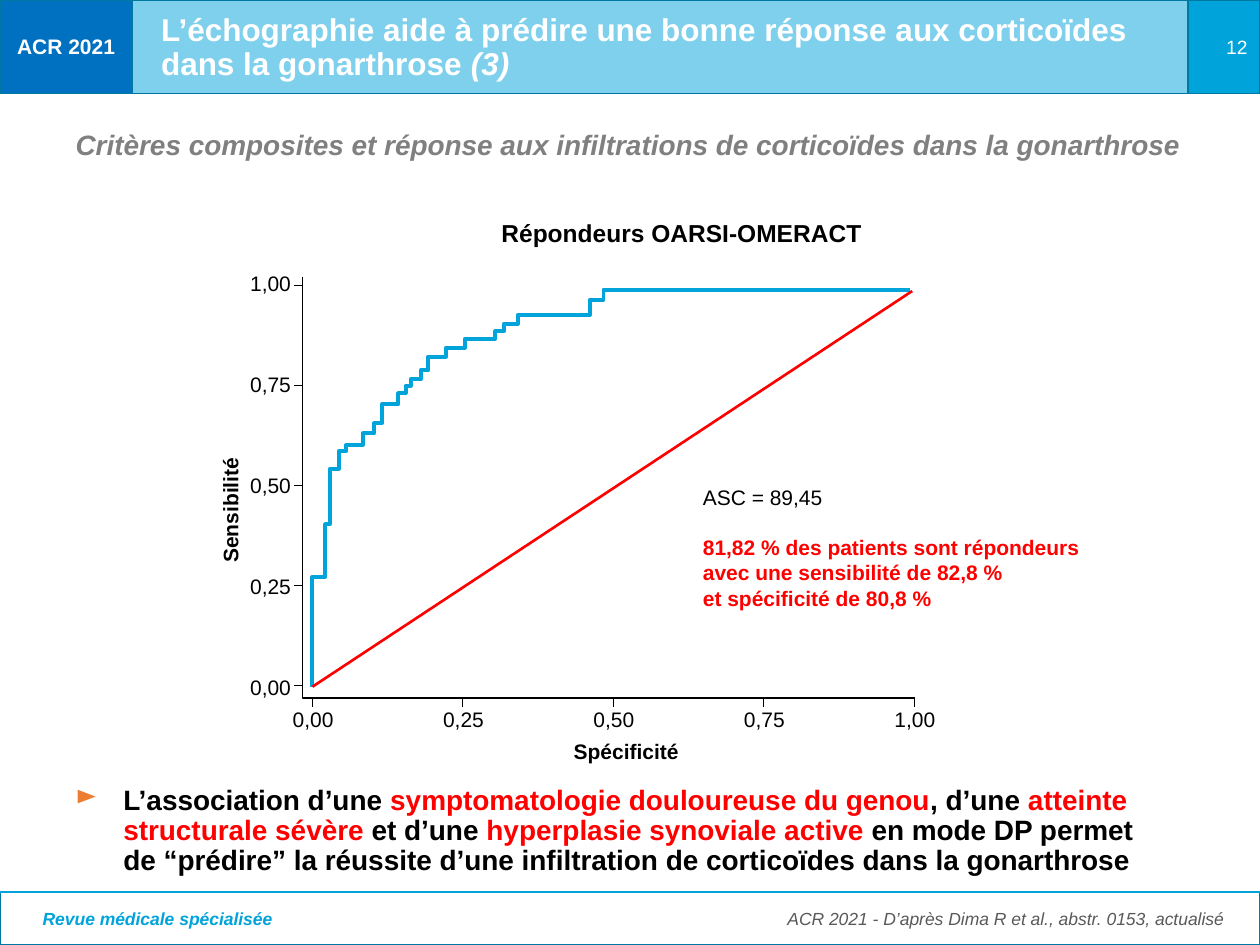
from dataclasses import dataclass
from itertools import chain
from typing import Optional

from lxml.etree import SubElement
from pptx import Presentation
from pptx.dml.color import RGBColor
from pptx.enum.shapes import MSO_CONNECTOR, MSO_SHAPE
from pptx.enum.text import MSO_ANCHOR, MSO_AUTO_SIZE, PP_ALIGN
from pptx.oxml.ns import qn
from pptx.util import Inches, Pt

COLS, ROWS = 100, 75
WIDTH, HEIGHT = Inches(10), Inches(7.5)
BLACK, WHITE, RED, CYAN, EDGE = "000000", "FFFFFF", "FF0000", "00A3DA", "0079A1"
LEFT, MID, RIGHT = PP_ALIGN.LEFT, PP_ALIGN.CENTER, PP_ALIGN.RIGHT


@dataclass(frozen=True)
class Box:
    """A place on the grid, in columns and rows."""
    col: float
    row: float
    cols: float
    rows: float


@dataclass(frozen=True)
class Style:
    """The look of a paragraph."""
    size: float
    color: str = BLACK
    bold: bool = False
    italic: bool = False
    align: PP_ALIGN = LEFT
    space: Optional[float] = None
    before: float = 0


@dataclass(frozen=True)
class Part:
    """A run, with what sets it apart from its paragraph."""
    text: str
    color: Optional[str] = None
    italic: Optional[bool] = None


@dataclass(frozen=True)
class Panel:
    """A filled block of the page frame."""
    box: Box
    fill: str
    alpha: int = 100
    text: str = ""
    style: Style = Style(12)


def across(col: float) -> int:
    """Turn columns into a length."""
    return round(WIDTH * col / COLS)


def down(row: float) -> int:
    """Turn rows into a length."""
    return round(HEIGHT * row / ROWS)


def place(box: Box) -> tuple[int, int, int, int]:
    """Give left, top, width and height of a box."""
    return across(box.col), down(box.row), across(box.cols), down(box.rows)


def paint(target, color: str) -> None:
    """Colour a fill solidly."""
    target.solid()
    target.fore_color.rgb = RGBColor.from_string(color)


def write(para, style: Style, parts: list[Part]) -> None:
    """Fill a paragraph with styled runs."""
    font = para.font
    font.name, font.size = "Arial", Pt(style.size)
    font.bold, font.italic = style.bold, style.italic
    paint(font.fill, style.color)
    para.alignment, para.line_spacing = style.align, style.space
    para.space_before = Pt(style.before)
    for part in parts:
        for turn, line in enumerate(part.text.split("\n")):
            if turn:
                para.add_line_break()
            run = para.add_run()
            run.text = line
            run.font.italic = part.italic
            if part.color:
                paint(run.font.fill, part.color)


def add_text(shapes, box: Box, style: Style, *parts: Part, tight: bool = False):
    """Add a text box, with no margins or wrapping if tight."""
    shape = shapes.add_textbox(*place(box))
    frame = shape.text_frame
    frame.word_wrap = not tight
    if tight:
        frame.margin_left = frame.margin_right = 0
        frame.margin_top = frame.margin_bottom = 0
    write(frame.paragraphs[0], style, list(parts))
    return shape


def add_panel(shapes, panel: Panel) -> None:
    """Add a block with its thin edge and any text."""
    shape = shapes.add_shape(MSO_SHAPE.RECTANGLE, *place(panel.box))
    shape.shadow.inherit = False
    paint(shape.fill, panel.fill)
    if panel.alpha < 100:
        color = shape.fill._xPr.find(".//" + qn("a:srgbClr"))
        SubElement(color, qn("a:alpha")).set("val", str(panel.alpha * 1000))
    paint(shape.line.fill, EDGE)
    shape.line.width = Pt(0)
    if panel.text:
        shape.text_frame.vertical_anchor = MSO_ANCHOR.MIDDLE
        write(shape.text_frame.paragraphs[0], panel.style, [Part(panel.text)])


def add_line(shapes, start: tuple, end: tuple, color: str, width: float) -> None:
    """Add a straight line between two grid points."""
    line = shapes.add_connector(MSO_CONNECTOR.STRAIGHT, across(start[0]), down(start[1]),
                                across(end[0]), down(end[1]))
    paint(line.line.fill, color)
    line.line.width = Pt(width)
    SubElement(line._element.spPr, qn("a:effectLst"))


def add_trace(shapes, points: list[tuple], color: str, width: float) -> None:
    """Add an open outline through grid points."""
    first, *rest = [(across(col), down(row)) for col, row in points]
    pen = shapes.build_freeform(*first)
    pen.add_line_segments(rest, close=False)
    shape = pen.convert_to_shape()
    shape.shadow.inherit = False
    shape.fill.background()
    paint(shape.line.fill, color)
    shape.line.width = Pt(width)


def add_bullet(para, mark: str, color: str, indent: float) -> None:
    """Give a paragraph a coloured bullet and a hanging indent."""
    props = para._p.get_or_add_pPr()
    props.set("marL", str(across(indent)))
    props.set("indent", str(-across(indent)))
    tint = SubElement(props, qn("a:buClr"))
    SubElement(tint, qn("a:srgbClr")).set("val", color)
    sign = SubElement(props, qn("a:buChar"))
    sign.set("char", mark)
    props.find(qn("a:defRPr")).addprevious(tint)
    props.find(qn("a:defRPr")).addprevious(sign)


def add_curve(shapes) -> None:
    """Draw the ROC plot: axes, ticks, labels, steps and diagonal."""
    left, base = 24, 55.4
    add_trace(shapes, [(72.6, base), (left, base), (left, 22)], BLACK, 0.63)
    for turn, label in enumerate(["0,00", "0,25", "0,50", "0,75", "1,00"]):
        col, row = 24.8 + 11.94 * turn, 54.4 - 7.93 * turn
        add_line(shapes, (left, row), (left - 0.7, row), BLACK, 0.63)
        add_line(shapes, (col, base), (col, base + 0.7), BLACK, 0.63)
        add_text(shapes, Box(19.8, 53.5 - 8 * turn, 3.3, 2),
                 Style(12, align=RIGHT), Part(label), tight=True)
        add_text(shapes, Box(col - 1.6, 56.1, 3.3, 2),
                 Style(12, align=MID), Part(label), tight=True)
    name = Style(12, bold=True, align=MID)
    add_text(shapes, Box(45.5, 58.6, 8.4, 2), name, Part("Spécificité"), tight=True)
    side = add_text(shapes, Box(13.8, 39.5, 8.9, 2), name, Part("Sensibilité"), tight=True)
    side.rotation = 270
    cols = [24.8, 25.8, 26.2, 26.9, 27.5, 28.8, 29.7, 30.3, 31.6, 32.2, 32.6, 33.4,
            34, 35.4, 36.9, 39.3, 40, 41.1, 46.8, 47.9, 72.2]
    rows = [54.5, 45.8, 41.6, 37.2, 35.8, 35.3, 34.4, 33.6, 32.1, 31.2, 30.6, 30.1,
            29.4, 28.3, 27.6, 26.9, 26.3, 25.7, 25, 23.8, 23]
    steps = chain.from_iterable(((a, b), (a, c)) for a, b, c in zip(cols, rows, rows[1:]))
    add_trace(shapes, [*steps, (cols[-1], rows[-1])], CYAN, 2.25)
    add_line(shapes, (24.8, 54.5), (72.4, 23.1), RED, 1.5)


def main() -> None:
    """Build the slide and save it."""
    deck = Presentation()
    deck.slide_width, deck.slide_height = WIDTH, HEIGHT
    slide = deck.slides.add_slide(deck.slide_layouts[5])
    shapes = slide.shapes
    for panel in [
        Panel(Box(0, 70.8, 100, 4.2), WHITE),
        Panel(Box(10.5, 0, 83.8, 7.4), CYAN, 50),
        Panel(Box(0, 0, 10.5, 7.4), "0070C0", 100, "ACR 2021",
              Style(12, WHITE, True, align=MID)),
        Panel(Box(94.3, 0, 5.7, 7.4), CYAN, 100, "12", Style(11, WHITE, align=RIGHT)),
    ]:
        add_panel(shapes, panel)
    add_line(shapes, (0, 70.8), (100, 70.8), CYAN, 0.75)
    add_text(shapes, Box(2.4, 71.6, 34.7, 2.7), Style(10, CYAN, True, True),
             Part("Revue médicale spécialisée"))
    add_text(shapes, Box(57.7, 71.6, 40.4, 2.7), Style(10, "595959", italic=True, align=RIGHT),
             Part("ACR 2021 - D’après Dima R et al., abstr. 0153, actualisé"))
    head = add_text(shapes, Box(11.8, 0.4, 80.1, 6.8), Style(18, WHITE, True, space=0.9),
                    Part("L’échographie aide à prédire une bonne réponse aux corticoïdes "
                         "dans la gonarthrose "), Part("(3)", italic=True))
    head.text_frame.vertical_anchor = MSO_ANCHOR.MIDDLE

    title = shapes.title
    title.left, title.top, title.width, title.height = place(Box(5, 9.9, 93.3, 5.1))
    title.text_frame.auto_size = MSO_AUTO_SIZE.NONE
    title.text_frame.vertical_anchor = MSO_ANCHOR.TOP
    write(title.text_frame.paragraphs[0], Style(16, "808080", True, True, space=0.9),
          [Part("Critères composites et réponse aux infiltrations de corticoïdes "
                "dans la gonarthrose")])

    add_text(shapes, Box(32.1, 16.8, 44, 3.4), Style(14, bold=True, align=MID),
             Part("Répondeurs OARSI-OMERACT"))
    add_curve(shapes.add_group_shape().shapes)
    note = add_text(shapes, Box(54.8, 38, 41.8, 11.1), Style(12), Part("ASC = 89,45"))
    write(note.text_frame.add_paragraph(), Style(12, RED, True, before=14),
          [Part("81,82 % des patients sont répondeurs\navec une sensibilité de 82,8 %\n"
                "et spécificité de 80,8 %")])
    point = add_text(shapes, Box(5, 61.9, 88.1, 8), Style(16, bold=True, space=0.9),
                     Part("L’association d’une "),
                     Part("symptomatologie douloureuse du genou", RED), Part(", d’une "),
                     Part("atteinte structurale sévère", RED), Part(" et d’une "),
                     Part("hyperplasie synoviale active ", RED),
                     Part("en mode DP permet de “prédire” la réussite d’une infiltration "
                          "de corticoïdes dans la gonarthrose"))
    add_bullet(point.text_frame.paragraphs[0], "►", "ED7D31", 3.8)
    deck.save("out.pptx")


if __name__ == "__main__":
    main()
